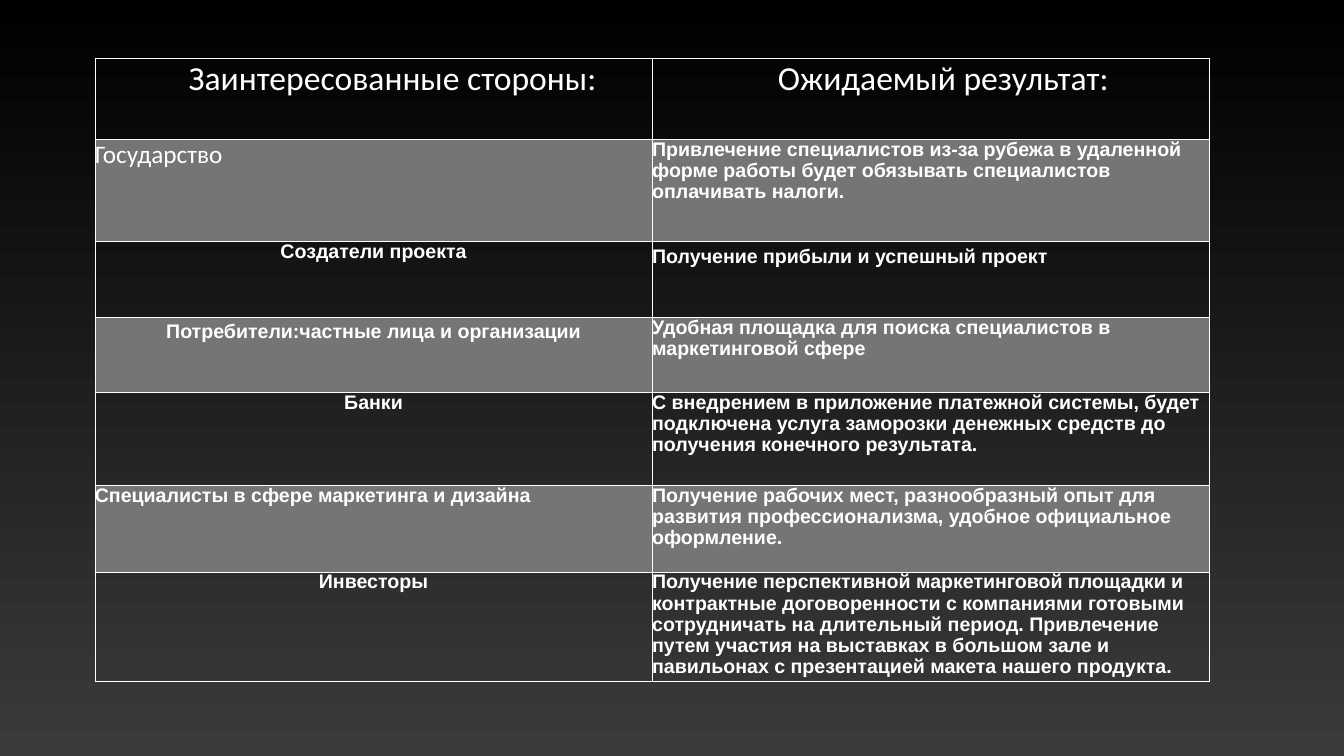
from lxml.etree import SubElement
from pptx import Presentation
from pptx.dml.color import RGBColor
from pptx.enum.text import PP_ALIGN
from pptx.oxml.ns import qn
from pptx.util import Cm, Pt

WHITE = RGBColor(0xFF, 0xFF, 0xFF)
BLACK = RGBColor(0x00, 0x00, 0x00)
CHARCOAL = RGBColor(0x3B, 0x3B, 0x3B)
GRAY = RGBColor(0x74, 0x76, 0x76)

LEFT, CENTER = PP_ALIGN.LEFT, PP_ALIGN.CENTER
TIGHT, LOOSE = 0.97, 1.18
COLUMN_WIDTH = Cm(28.09)
HEADERS = [("Заинтересованные стороны:", Cm(1.93)), ("Ожидаемый результат:", Cm(1.27))]
HEADER_HEIGHT = Cm(4.06)
STAKEHOLDERS = [
    (5.16, "Государство", LEFT, TIGHT,
     "Привлечение специалистов из-за рубежа в удаленной форме работы будет "
     "обязывать специалистов оплачивать налоги.", TIGHT),
    (3.81, "Создатели проекта", CENTER, TIGHT,
     "Получение прибыли и успешный проект", LOOSE),
    (3.81, "Потребители:частные лица и организации", CENTER, LOOSE,
     "Удобная площадка для поиска специалистов в маркетинговой сфере", TIGHT),
    (4.67, "Банки", CENTER, TIGHT,
     "С внедрением в приложение платежной системы, будет подключена услуга "
     "заморозки денежных средств до получения конечного результата.", TIGHT),
    (4.37, "Специалисты в сфере маркетинга и дизайна", LEFT, TIGHT,
     "Получение рабочих мест, разнообразный опыт для развития "
     "профессионализма, удобное официальное оформление.", TIGHT),
    (5.51, "Инвесторы", CENTER, TIGHT,
     "Получение перспективной маркетинговой площадки и контрактные "
     "договоренности с компаниями готовыми сотрудничать на длительный период. "
     "Привлечение путем участия на выставках в большом зале и "
     "павильонах с презентацией макета нашего продукта.", TIGHT),
]


def paint_background(page):
    fill = page.background.fill
    fill.gradient()
    fill.gradient_angle = 270
    for stop, color, position in zip(fill.gradient_stops, (BLACK, CHARCOAL), (0, 1)):
        stop.color.rgb = color
        stop.position = position


def add_borders(cell):
    properties = cell._tc.get_or_add_tcPr()
    for index, side in enumerate(("a:lnL", "a:lnR", "a:lnT", "a:lnB")):
        line = SubElement(properties, qn(side), w=str(Pt(1)))
        SubElement(SubElement(line, qn("a:solidFill")), qn("a:srgbClr"), val=str(WHITE))
        properties.insert(index, line)


def fill_cell(cell, text, size, font="Arial", bold=True, align=LEFT,
              spacing=TIGHT, indent=0, shaded=False):
    cell.margin_left = indent
    cell.margin_right = cell.margin_top = cell.margin_bottom = 0
    if shaded:
        cell.fill.solid()
        cell.fill.fore_color.rgb = GRAY
    else:
        cell.fill.background()
    add_borders(cell)
    cell.text = text
    para = cell.text_frame.paragraphs[0]
    para.alignment = align
    para.line_spacing = spacing
    para.font.name = font
    para.font.size = Pt(size)
    para.font.bold = bold
    para.font.color.rgb = WHITE


def add_stakeholder_table(page):
    heights = [HEADER_HEIGHT] + [Cm(row[0]) for row in STAKEHOLDERS]
    frame = page.shapes.add_table(len(heights), 2, Cm(4.78), Cm(2.95),
                                  2 * COLUMN_WIDTH, sum(heights))
    table = frame.table
    table.first_row = table.horz_banding = False
    for column in table.columns:
        column.width = COLUMN_WIDTH
    for row, height in zip(table.rows, heights):
        row.height = height

    for column, (text, indent) in enumerate(HEADERS):
        fill_cell(table.cell(0, column), text, 48, "Calibri", False, CENTER, 1.0, indent)

    for row, (_, party, align, party_spacing, result, result_spacing) in enumerate(STAKEHOLDERS, 1):
        shaded = row % 2 == 1
        size, font, bold = (36, "Calibri", False) if row == 1 else (28, "Arial", True)
        fill_cell(table.cell(row, 0), party, size, font, bold, align, party_spacing, shaded=shaded)
        fill_cell(table.cell(row, 1), result, 28, spacing=result_spacing, shaded=shaded)


def main():
    deck = Presentation()
    deck.slide_width = Cm(67.74)
    deck.slide_height = Cm(38.1)
    page = deck.slides.add_slide(deck.slide_layouts[6])
    paint_background(page)
    add_stakeholder_table(page)
    deck.save("out.pptx")


if __name__ == "__main__":
    main()
